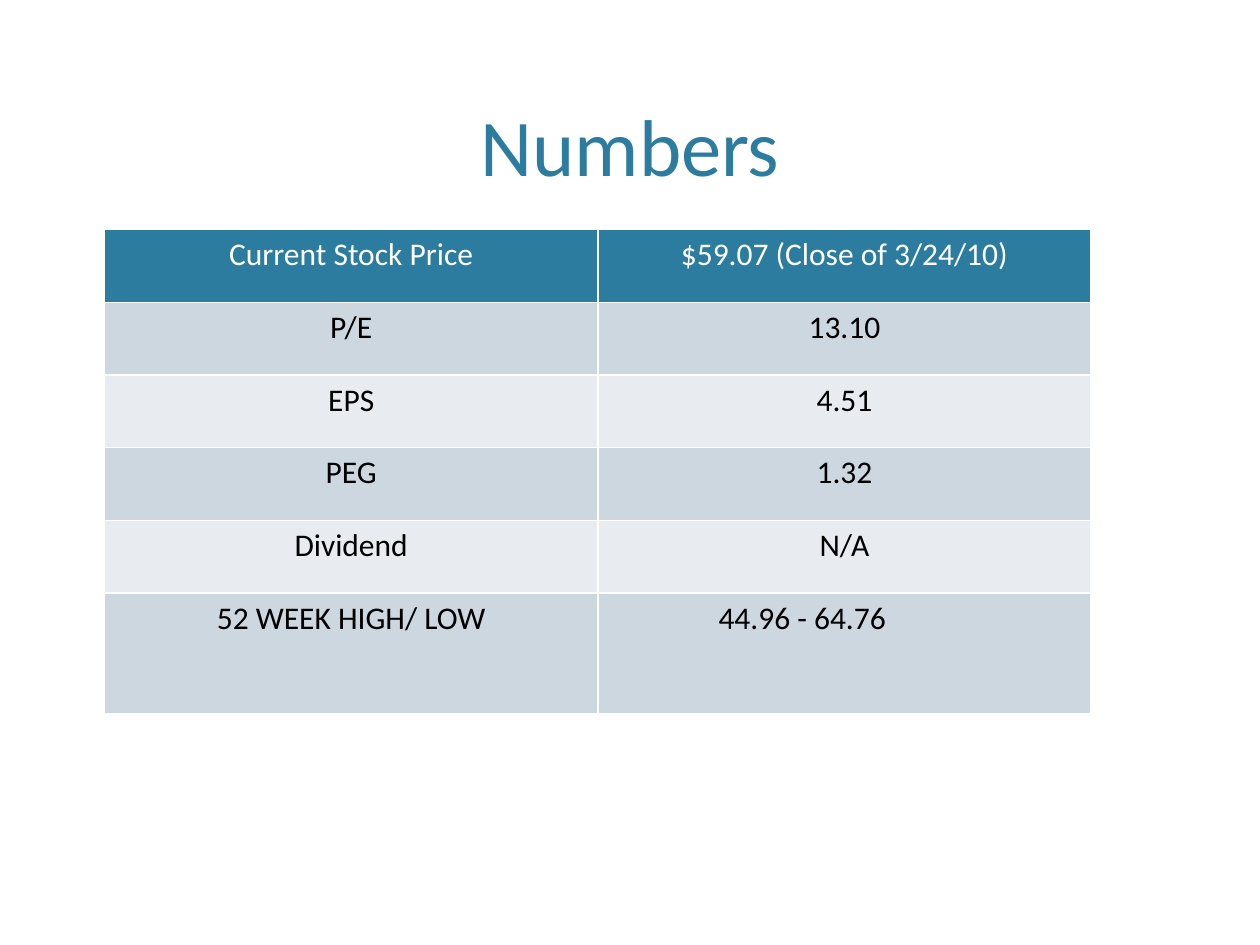
from dataclasses import dataclass

from pptx import Presentation
from pptx.dml.color import RGBColor
from pptx.enum.text import MSO_ANCHOR, PP_ALIGN
from pptx.util import Inches, Pt

CENTER = PP_ALIGN.CENTER
TOP = MSO_ANCHOR.TOP
BOTTOM = MSO_ANCHOR.BOTTOM
TITLE_ONLY = 5


@dataclass(frozen=True)
class Theme:
    font: str = "Calibri"
    accent: str = "2C7C9F"
    light: str = "FFFFFF"
    dark: str = "000000"
    bands: tuple = ("CDD7DF", "E8ECF0")
    title: int = 46
    body: int = 18


def write(frame, text, font, size, color, anchor):
    frame.word_wrap = True
    frame.vertical_anchor = anchor
    para = frame.paragraphs[0]
    para.alignment = CENTER
    run = para.add_run()
    run.text = text
    run.font.name = font
    run.font.size = Pt(size)
    run.font.bold = False
    run.font.color.rgb = RGBColor.from_string(color)


class Deck:
    def __init__(self, theme, width, height):
        self.theme = theme
        self.prs = Presentation()
        self.prs.slide_width = Inches(width)
        self.prs.slide_height = Inches(height)
        self.slide = self.prs.slides.add_slide(self.prs.slide_layouts[TITLE_ONLY])

    def place(self, x, y, w, h):
        wide, high = self.prs.slide_width, self.prs.slide_height
        return int(x * wide), int(y * high), int(w * wide), int(h * high)

    def title(self, text, box):
        shape = self.slide.shapes.title
        shape.left, shape.top, shape.width, shape.height = self.place(*box)
        look = self.theme
        write(shape.text_frame, text, font=look.font, size=look.title,
              color=look.accent, anchor=BOTTOM)

    def table(self, rows, box, shares):
        left, top, width, height = self.place(*box)
        grid = self.slide.shapes.add_table(
            len(rows), len(rows[0]), left, top, width, height).table
        look = self.theme
        for i, (row, share) in enumerate(zip(rows, shares)):
            grid.rows[i].height = int(height * share / sum(shares))
            fill = look.bands[(i - 1) % 2] if i else look.accent
            color = look.dark if i else look.light
            for j, text in enumerate(row):
                cell = grid.cell(i, j)
                cell.fill.solid()
                cell.fill.fore_color.rgb = RGBColor.from_string(fill)
                write(cell.text_frame, text, font=look.font, size=look.body,
                      color=color, anchor=TOP)
        return grid


def main():
    deck = Deck(Theme(), 10, 7.5)
    deck.title("Numbers", (0.06, 0.016, 0.88, 0.195))
    rows = [
        ("Current Stock Price", "$59.07 (Close of 3/24/10)"),
        ("P/E", "13.10"),
        ("EPS", "4.51"),
        ("PEG", "1.32"),
        ("Dividend", "N/A"),
        ("52 WEEK HIGH/ LOW", "44.96 - 64.76"),
    ]
    grid = deck.table(rows, (0.083, 0.243, 0.783, 0.513), (3, 3, 3, 3, 3, 5))
    grid.cell(5, 1).margin_right = Inches(0.77)
    deck.prs.save("out.pptx")


if __name__ == "__main__":
    main()
